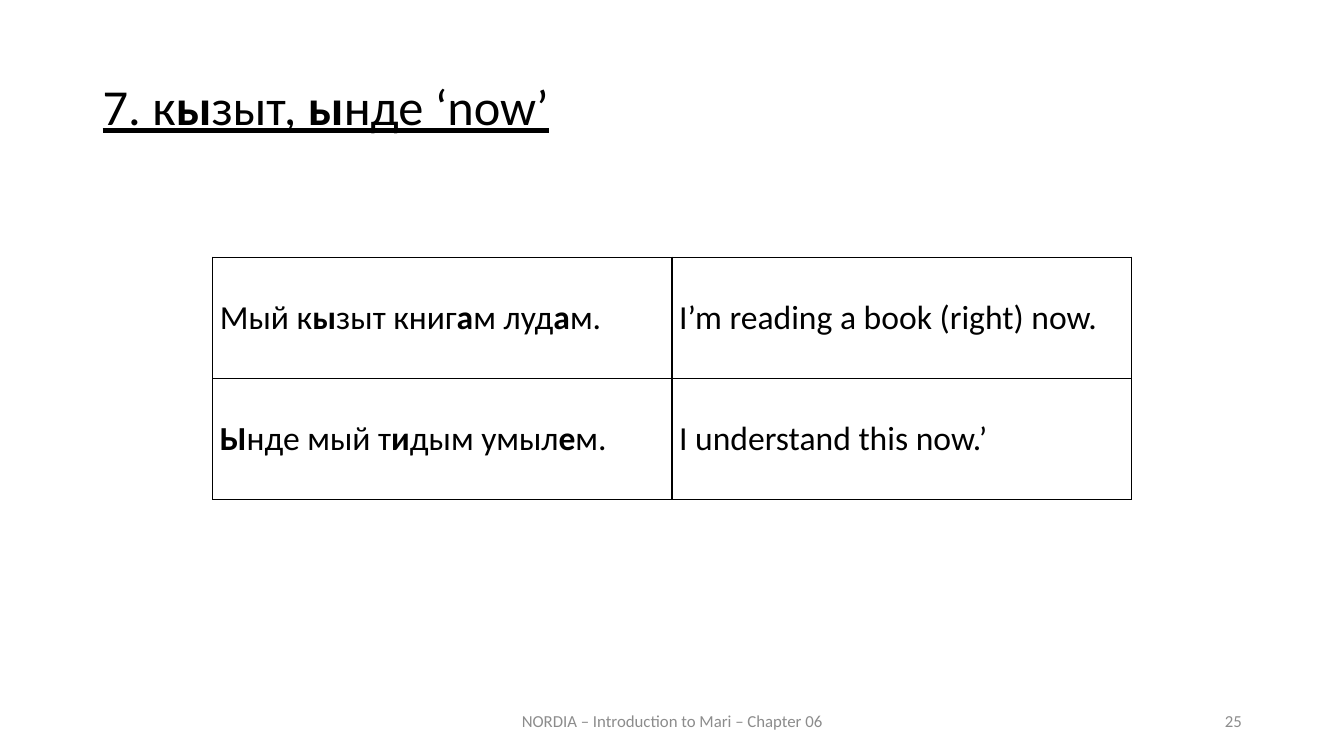
"""Build a Mari grammar slide with a heading, example table and footer."""
from dataclasses import dataclass

from lxml import etree
from pptx import Presentation
from pptx.dml.color import RGBColor
from pptx.enum.text import MSO_ANCHOR, PP_ALIGN
from pptx.oxml.ns import qn
from pptx.util import Cm, Pt

LEFT, CENTER, RIGHT, JUSTIFY = PP_ALIGN.LEFT, PP_ALIGN.CENTER, PP_ALIGN.RIGHT, PP_ALIGN.JUSTIFY
TOP, MIDDLE = MSO_ANCHOR.TOP, MSO_ANCHOR.MIDDLE


@dataclass(frozen=True)
class Theme:
    """Hold the colours, font and type sizes of the slide."""
    font: str = "Calibri"
    ink: str = "000000"
    muted: str = "8C8C8C"
    heading: int = 36
    example: int = 24
    footer: int = 12
    border: int = 1


@dataclass(frozen=True)
class TextStyle:
    """Describe how one paragraph is set."""
    size: int
    color: str
    align: PP_ALIGN = LEFT
    underline: bool = False


@dataclass(frozen=True)
class TextBlock:
    """Describe a text box, with lengths in centimetres."""
    text: str
    left: float
    top: float
    width: float
    height: float
    style: TextStyle
    anchor: MSO_ANCHOR = MIDDLE
    line_spacing: float = 1.0
    space_before: int = 0


THEME = Theme()
EXAMPLE_STYLE = TextStyle(THEME.example, THEME.ink)
BLOCKS = (
    TextBlock("7. к*ы*зыт, *ы*нде ‘now’", 2.34, 1.93, 29.21, 14.55,
              TextStyle(THEME.heading, THEME.ink, JUSTIFY, True), TOP, 0.9, 12),
    TextBlock("NORDIA – Introduction to Mari – Chapter 06", 11.23, 17.65, 11.43, 1.02,
              TextStyle(THEME.footer, THEME.muted, CENTER)),
    TextBlock("25", 23.93, 17.65, 7.62, 1.02,
              TextStyle(THEME.footer, THEME.muted, RIGHT)),
)
EXAMPLES = (
    ("Мый к*ы*зыт книг*а*м луд*а*м.", "I’m reading a book (right) now."),
    ("*Ы*нде мый т*и*дым умыл*е*м.", "I understand this now.’"),
)


def write_text(para, text: str, style: TextStyle) -> None:
    """Fill a paragraph, setting the parts between asterisks in bold."""
    para.alignment = style.align
    para.font.name = THEME.font
    para.font.size = Pt(style.size)
    para.font.color.rgb = RGBColor.from_string(style.color)
    para.font.underline = style.underline
    for index, part in enumerate(text.split("*")):
        if part:
            span = para.add_run()
            span.text = part
            span.font.bold = index % 2 == 1


def add_block(page, block: TextBlock) -> None:
    """Add one wrapped text box to the page."""
    box = page.shapes.add_textbox(Cm(block.left), Cm(block.top), Cm(block.width), Cm(block.height))
    frame = box.text_frame
    frame.word_wrap = True
    frame.vertical_anchor = block.anchor
    para = frame.paragraphs[0]
    para.line_spacing = block.line_spacing
    para.space_before = Pt(block.space_before)
    write_text(para, block.text, block.style)


def add_borders(cell) -> None:
    """Draw a solid line on every side of a cell."""
    properties = cell._tc.get_or_add_tcPr()
    for side in ("a:lnL", "a:lnR", "a:lnT", "a:lnB"):
        line = etree.SubElement(properties, qn(side), w=str(Pt(THEME.border)))
        fill = etree.SubElement(line, qn("a:solidFill"))
        etree.SubElement(fill, qn("a:srgbClr"), val=THEME.ink)


def add_examples(page) -> None:
    """Add the table of Mari sentences and their translations."""
    frame = page.shapes.add_table(len(EXAMPLES), len(EXAMPLES[0]),
                                  Cm(5.36), Cm(6.48), Cm(23.15), Cm(6.1))
    table = frame.table
    table.first_row = table.horz_banding = False
    for row, sentences in enumerate(EXAMPLES):
        for column, sentence in enumerate(sentences):
            cell = table.cell(row, column)
            add_borders(cell)
            cell.fill.background()
            cell.vertical_anchor = MIDDLE
            cell.margin_left = cell.margin_right = Cm(0.18)
            cell.margin_top = cell.margin_bottom = Cm(0)
            write_text(cell.text_frame.paragraphs[0], sentence, EXAMPLE_STYLE)


def main() -> None:
    """Build the slide and save the deck."""
    deck = Presentation()
    deck.slide_width, deck.slide_height = Cm(33.87), Cm(19.05)
    page = deck.slides.add_slide(deck.slide_layouts[6])
    for block in BLOCKS:
        add_block(page, block)
    add_examples(page)
    deck.save("out.pptx")


if __name__ == "__main__":
    main()
